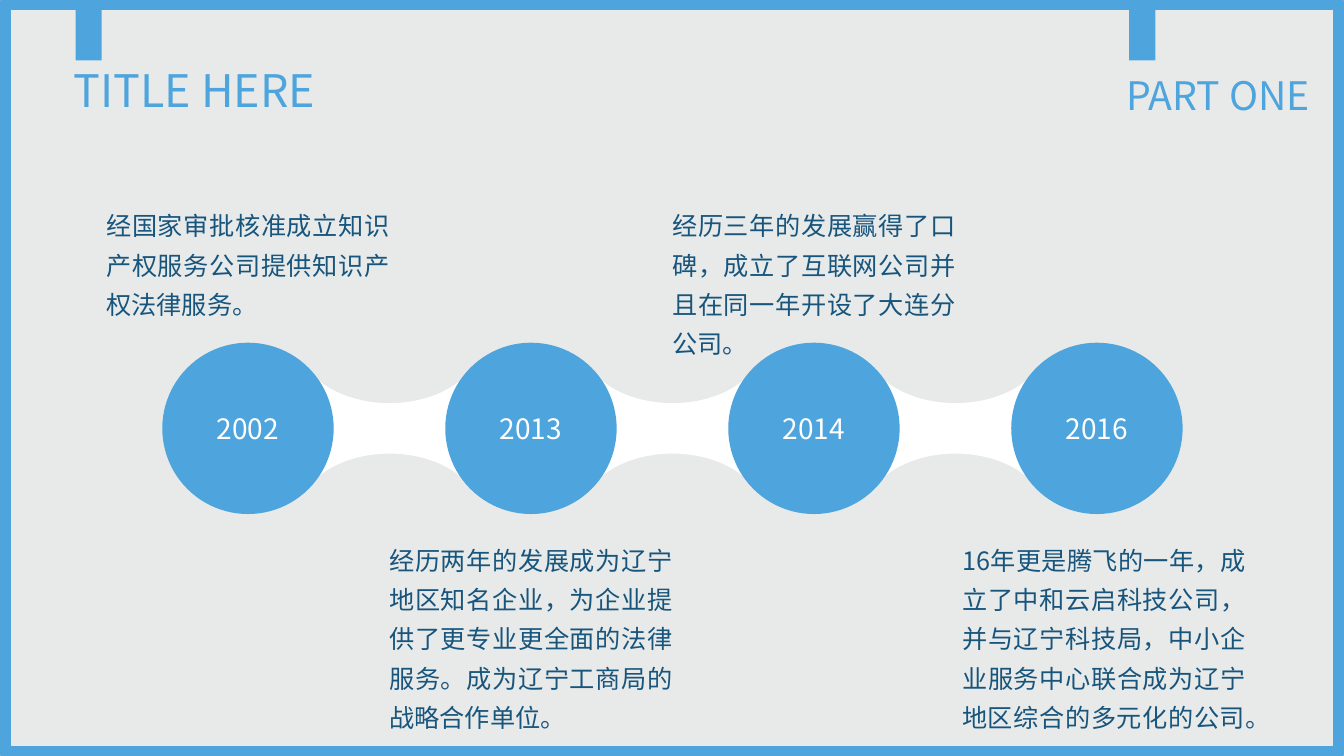
from lxml import etree
from pptx import Presentation
from pptx.dml.color import RGBColor
from pptx.enum.shapes import MSO_SHAPE
from pptx.enum.text import MSO_ANCHOR, MSO_AUTO_SIZE, PP_ALIGN
from pptx.oxml.ns import qn
from pptx.util import Inches, Pt

RECT, OVAL = MSO_SHAPE.RECTANGLE, MSO_SHAPE.OVAL
TOP, MIDDLE = MSO_ANCHOR.TOP, MSO_ANCHOR.MIDDLE
LEFT, CENTER, JUSTIFY = PP_ALIGN.LEFT, PP_ALIGN.CENTER, PP_ALIGN.JUSTIFY
FIXED, GROW = MSO_AUTO_SIZE.NONE, MSO_AUTO_SIZE.SHAPE_TO_FIT_TEXT

TITLE = "TITLE HERE"
PART = "PART ONE"
STEPS = [
    ("2002", 3, "经国家审批核准成立知识产权服务公司提供知识产权法律服务。"),
    ("2013", 5, "经历两年的发展成为辽宁地区知名企业，为企业提供了更专业更全面的法律服务。成为辽宁工商局的战略合作单位。"),
    ("2014", 4, "经历三年的发展赢得了口碑，成立了互联网公司并且在同一年开设了大连分公司。"),
    ("2016", 5, "16年更是腾飞的一年，成立了中和云启科技公司，并与辽宁科技局，中小企业服务中心联合成为辽宁地区综合的多元化的公司。"),
]
COLORS = {"back": "E8EAE9", "blue": "4EA4DD", "navy": "18557D", "white": "FFFFFF"}
FONT = "Noto Sans CJK SC"

WIDE, HIGH = 13.33, 7.5
SIDE, EDGE = 0.05, 0.04
TABS = (0.75, 11.2)
FIRST, LAST, AXIS, SIZE = 2.46, 10.88, 4.25, 1.7
PITCH = (LAST - FIRST) / (len(STEPS) - 1)
NOTE_W, ROW = 3.01, 0.39
NOTE_TOPS = (1.95, 5.27)
NUDGES = (0, 0, 0, 0.07)
HALF_W, HALF_H = 0.89, 0.5
NECK, WAIST = 0.73, 0.25
OUTER, INNER = (0.57, 0.35), (0.3, 0.25)


def color(name):
    return RGBColor.from_string(COLORS[name])


def place(shape, left, top, width, height):
    shape.left, shape.top = Inches(left), Inches(top)
    shape.width, shape.height = Inches(width), Inches(height)


def paint(shape, name):
    shape.shadow.inherit = False
    shape.fill.solid()
    shape.fill.fore_color.rgb = color(name)
    shape.line.fill.background()


def add(kind, left, top, width, height, name):
    shape = slide.shapes.add_shape(kind, *map(Inches, (left, top, width, height)))
    paint(shape, name)
    return shape


def write(shape, text, size, name, align, anchor, space=1.0, pad=(0.1, 0.05), fit=FIXED):
    frame = shape.text_frame
    frame.word_wrap = True
    frame.auto_size = fit
    frame.vertical_anchor = anchor
    frame.margin_left = frame.margin_right = Inches(pad[0])
    frame.margin_top = frame.margin_bottom = Inches(pad[1])
    frame.text = text
    para = frame.paragraphs[0]
    para.alignment, para.line_spacing = align, space
    para.space_before = Pt(0)
    para.font.size, para.font.name = Pt(size), FONT
    para.font.color.rgb = color(name)
    props = para._p.get_or_add_pPr()
    asian = etree.SubElement(props.find(qn("a:defRPr")), qn("a:ea"))
    asian.set("typeface", FONT)
    return props


def curve(line, pulls):
    line.tag = qn("a:cubicBezTo")
    for i, (x, y) in enumerate(pulls):
        spot = etree.Element(qn("a:pt"))
        spot.set("x", str(Inches(HALF_W + x)))
        spot.set("y", str(Inches(HALF_H + y)))
        line.insert(i, spot)


def bridge(mid):
    upper = [(x, -HALF_H) for x in (-HALF_W, -NECK, 0, NECK, HALF_W)]
    upper[2] = (0, -WAIST)
    ring = upper + [(-x, -y) for x, y in upper]
    spots = [(Inches(mid + x), Inches(AXIS + y)) for x, y in ring]
    form = slide.shapes.build_freeform(*spots[0])
    form.add_line_segments(spots[1:])
    shape = form.convert_to_shape()
    paint(shape, "white")
    lines = list(shape._element.iter(qn("a:lnTo")))
    for start, sign in ((1, -1), (6, 1)):
        ends = [(sign * x, sign * y) for x, y in (OUTER, INNER)]
        curve(lines[start], ends)
        curve(lines[start + 1], [(-x, y) for x, y in reversed(ends)])


deck = Presentation()
deck.slide_width, deck.slide_height = Inches(WIDE), Inches(HIGH)
slide = deck.slides.add_slide(deck.slide_layouts[1])
slide.background.fill.solid()
slide.background.fill.fore_color.rgb = color("back")

border = add(RECT, SIDE, EDGE, WIDE - 2 * SIDE, HIGH - 2 * EDGE, "back")
border.fill.background()
border.line.color.rgb = color("blue")
border.line.width = Pt(8.5)
tabs = [add(RECT, tab, EDGE, 0.26, 0.56, "blue") for tab in TABS]
for shape in (border, *tabs):
    slide.slide_layout.shapes._spTree.append(shape._element)

title, part = slide.placeholders
place(title, 0.63, 0.64, 6.97, 0.56)
write(title, TITLE, 32, "blue", LEFT, MIDDLE, 0.9)
place(part, 11.07, 0.71, 2.26, 0.42)
props = write(part, PART, 28, "blue", LEFT, TOP, 0.9)
props.set("marL", "0")
props.set("indent", "0")
props.find(qn("a:defRPr")).addprevious(etree.Element(qn("a:buNone")))

mids = [FIRST + PITCH * i for i in range(len(STEPS))]
for mid in mids[:-1]:
    bridge(mid + PITCH / 2)
for i, (mid, (year, rows, note)) in enumerate(zip(mids, STEPS)):
    disc = add(OVAL, mid - SIZE / 2, AXIS - SIZE / 2, SIZE, SIZE, "blue")
    write(disc, year, 20, "white", CENTER, MIDDLE, pad=(0, 0))
    box = slide.shapes.add_textbox(0, 0, 0, 0)
    place(box, mid - NOTE_W / 2 + NUDGES[i], NOTE_TOPS[i % 2], NOTE_W, ROW * rows + 0.11)
    write(box, note, 18, "navy", JUSTIFY, TOP, 1.3, fit=GROW)

deck.save("out.pptx")
